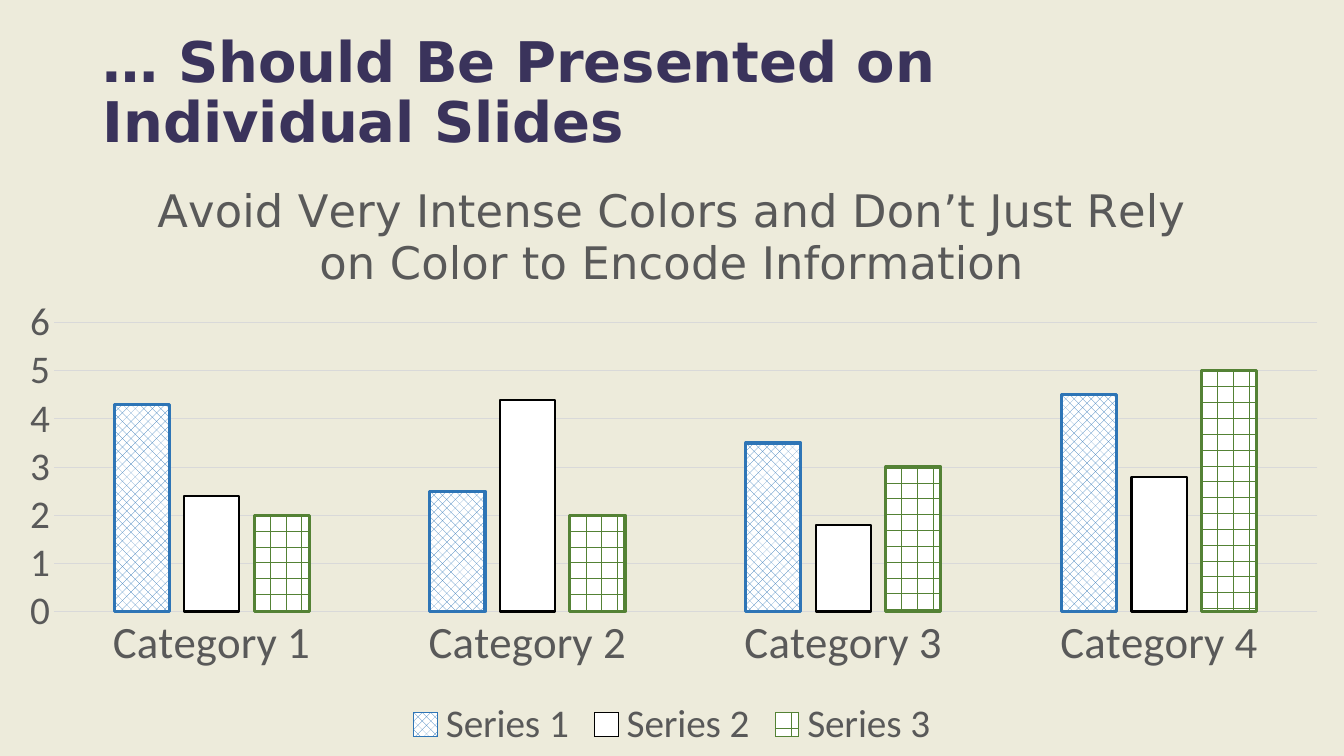
from dataclasses import dataclass

from pptx import Presentation
from pptx import util as u
from pptx.chart.data import CategoryChartData
from pptx.dml.color import RGBColor
from pptx.enum import chart as ch, dml, text
from pptx.oxml import parse_xml
from pptx.oxml.ns import nsdecls, qn


@dataclass(frozen=True)
class Theme:
    background: str = "EDEBDB"
    title: str = "3A335B"
    label: str = "595959"
    grid: str = "D9D9D9"
    blue: str = "2E75B6"
    green: str = "548235"
    black: str = "000000"
    white: str = "FFFFFF"
    heading_font: str = "DejaVu Sans"
    chart_font: str = "Calibri"
    title_size: int = 40
    large_size: int = 32
    small_size: int = 28


THEME = Theme()
CATEGORIES = ["Category 1", "Category 2", "Category 3", "Category 4"]
SERIES = [
    ("Series 1", (4.3, 2.5, 3.5, 4.5), THEME.blue, 2.25, "pct40"),
    ("Series 2", (2.4, 4.4, 1.8, 2.8), THEME.black, 1.5, None),
    ("Series 3", (2, 2, 3, 5), THEME.green, 2.25, "dotGrid"),
]


def rgb(color):
    return RGBColor.from_string(color)


def set_font(font, name, size, color, bold=False):
    font.name = name
    font.size = u.Pt(size)
    font.bold = bold
    font.color.rgb = rgb(color)


def set_line(line, color, width):
    line.color.rgb = rgb(color)
    line.width = u.Pt(width)


def add_title(s, words):
    sp = s.shapes.add_textbox(u.Inches(0.92), u.Inches(0.21), u.Inches(11.5), u.Inches(1.45))
    tf = sp.text_frame
    tf.word_wrap = True
    tf.vertical_anchor = text.MSO_ANCHOR.MIDDLE
    p = tf.paragraphs[0]
    p.text = words
    p.line_spacing = 0.9
    set_font(p.font, THEME.heading_font, THEME.title_size, THEME.title, True)


def style_series(series, color, width, pattern):
    fill = series.format.fill
    if pattern is None:
        fill.solid()
        fill.fore_color.rgb = rgb(THEME.white)
    else:
        fill.patterned()
        fill.pattern = dml.MSO_PATTERN.from_xml(pattern)
        fill.fore_color.rgb = rgb(color)
        fill.back_color.rgb = rgb(THEME.white)
    set_line(series.format.line, color, width)
    series.invert_if_negative = False


def style_axis(axis, size):
    axis.major_tick_mark = ch.XL_TICK_MARK.NONE
    axis.minor_tick_mark = ch.XL_TICK_MARK.NONE
    set_font(axis.tick_labels.font, THEME.chart_font, size, THEME.label)


def place_plot(chart, x, y, w, h):
    area = chart._chartSpace.chart.plotArea
    for layout in area.findall(qn("c:layout")):
        area.remove(layout)
    sizes = "".join(f'<c:{k} val="{v}"/>' for k, v in zip("xywh", (x, y, w, h)))
    area.insert(0, parse_xml(
        f'<c:layout {nsdecls("c")}><c:manualLayout><c:layoutTarget val="inner"/>'
        f'<c:xMode val="edge"/><c:yMode val="edge"/>{sizes}</c:manualLayout></c:layout>'))


def add_column_chart(s, heading):
    data = CategoryChartData()
    data.categories = CATEGORIES
    for name, values, *_ in SERIES:
        data.add_series(name, values)
    chart = s.shapes.add_chart(
        ch.XL_CHART_TYPE.COLUMN_CLUSTERED,
        u.Inches(0), u.Inches(1.53), u.Inches(13.33), u.Inches(5.97), data).chart
    set_font(chart.font, THEME.chart_font, 10, THEME.black)

    chart.has_title = True
    p = chart.chart_title.text_frame.paragraphs[0]
    p.text = heading
    set_font(p.font, THEME.heading_font, THEME.large_size, THEME.label)
    chart.chart_title.include_in_layout = False

    plot = chart.plots[0]
    plot.gap_width = 219
    plot.overlap = -27
    plot.vary_by_categories = False
    for series, (_, _, *style) in zip(plot.series, SERIES):
        style_series(series, *style)

    style_axis(chart.category_axis, THEME.large_size)
    set_line(chart.category_axis.format.line, THEME.grid, 0.75)
    style_axis(chart.value_axis, THEME.small_size)
    chart.value_axis.format.line.fill.background()
    chart.value_axis.minimum_scale = 0
    chart.value_axis.maximum_scale = 6
    chart.value_axis.major_unit = 1
    set_line(chart.value_axis.major_gridlines.format.line, THEME.grid, 0.75)

    chart.has_legend = True
    chart.legend.position = ch.XL_LEGEND_POSITION.BOTTOM
    chart.legend.include_in_layout = False
    set_font(chart.legend.font, THEME.chart_font, THEME.small_size, THEME.label)
    place_plot(chart, 0.04, 0.28, 0.94, 0.48)


def main():
    prs = Presentation()
    prs.slide_width = u.Inches(13.33)
    prs.slide_height = u.Inches(7.5)
    s = prs.slides.add_slide(prs.slide_layouts[6])
    s.background.fill.solid()
    s.background.fill.fore_color.rgb = rgb(THEME.background)
    add_title(s, "… Should Be Presented on Individual Slides")
    add_column_chart(
        s, "Avoid Very Intense Colors and Don’t Just Rely on Color to Encode Information")
    prs.save("out.pptx")


if __name__ == "__main__":
    main()
